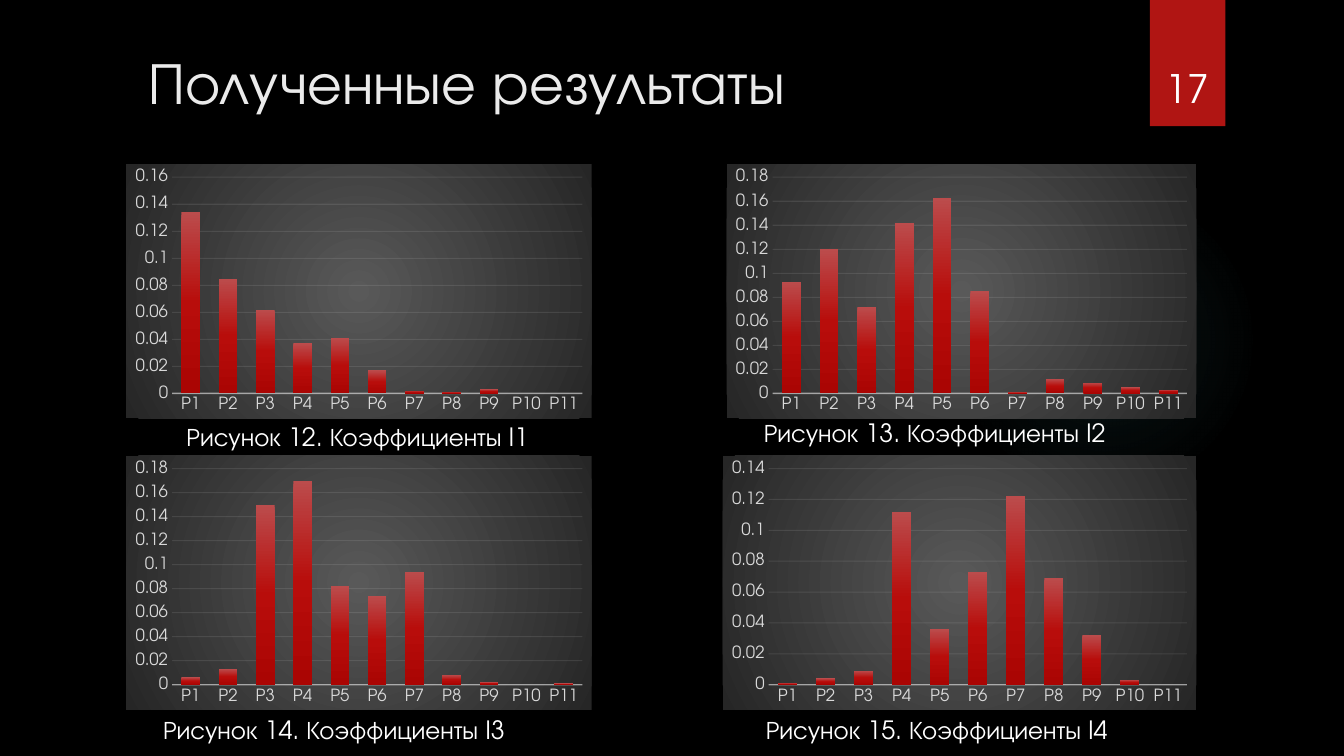
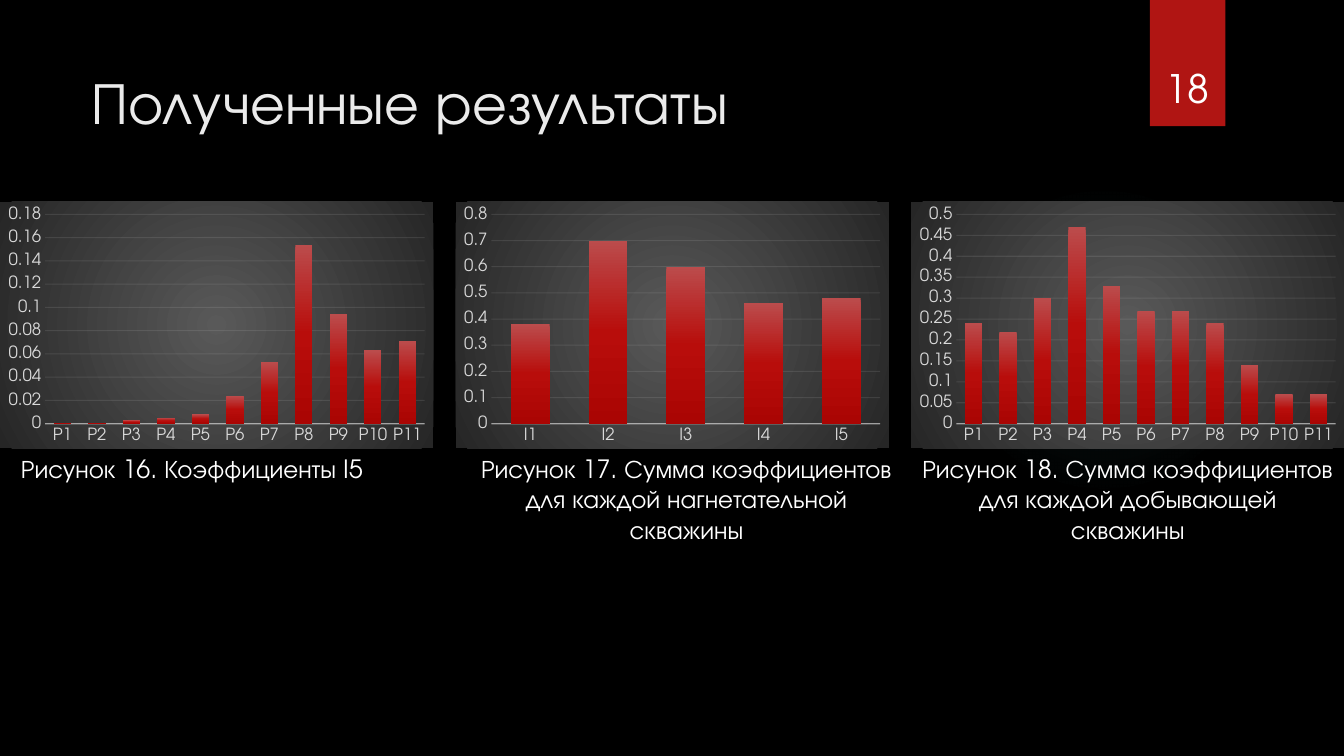
from lxml import etree
from pptx import Presentation
from pptx.chart.data import CategoryChartData
from pptx.dml.color import RGBColor
from pptx.enum.chart import XL_CHART_TYPE as ChartType, XL_TICK_MARK as TickMark
from pptx.enum.shapes import MSO_SHAPE as Preset
from pptx.enum.text import MSO_ANCHOR as Anchor, MSO_AUTO_SIZE as AutoSize, PP_ALIGN as Align
from pptx.oxml import parse_xml
from pptx.oxml.ns import nsdecls, qn
from pptx.util import Cm, Pt


class Theme:
    font = "TeX Gyre Adventor"
    background = "000000"
    band = "B01513"
    title = "EBEBEB"
    text = "FFFFFF"
    axis_text = "D9D9D9"
    axis_line = "F2F2F2"
    # Gradient stops: position %, colour, opacity %
    glow = [(0, "50B9C1", 7), (36, "50B9C1", 6), (69, "50B9C1", 0)]
    panel = [(0, "595959", 100), (100, "262626", 100)]
    bars = [(0, "BB4C4C", 100), (50, "B80D0B", 100), (100, "AA0503", 100)]
    title_size, number_size, caption_size, axis_size, chart_size = 42, 28, 18, 12, 10


def gradient(stops, radial=True):
    """Return a gradient fill, radial from the centre or running downwards."""
    stop_xml = "".join(
        f'<a:gs pos="{place * 1000}"><a:srgbClr val="{colour}">'
        f'<a:alpha val="{opacity * 1000}"/></a:srgbClr></a:gs>'
        for place, colour, opacity in stops)
    direction = ('<a:path path="circle"><a:fillToRect l="50000" t="50000" r="50000" b="50000"/></a:path>'
                 if radial else '<a:lin ang="5400000" scaled="0"/>')
    return parse_xml(f'<a:gradFill {nsdecls("a")} rotWithShape="1">'
                     f'<a:gsLst>{stop_xml}</a:gsLst>{direction}</a:gradFill>')


def add_text(page, text, left, top, width, height, *, size, colour=Theme.text,
             align=Align.LEFT, anchor=Anchor.TOP, grow=False):
    box = page.shapes.add_textbox(Cm(left), Cm(top), Cm(width), Cm(height))
    frame = box.text_frame
    frame.word_wrap = True
    frame.vertical_anchor = anchor
    frame.auto_size = AutoSize.SHAPE_TO_FIT_TEXT if grow else AutoSize.NONE
    para = frame.paragraphs[0]
    para.alignment = align
    span = para.add_run()
    span.text = text
    span.font.name = Theme.font
    span.font.size = Pt(size)
    span.font.color.rgb = RGBColor.from_string(colour)


# Content: each chart has place, categories, values, axis maximum and step;
# each caption has text, place and alignment
producers = [f"P{n}" for n in range(1, 12)]
injectors = [f"I{n}" for n in range(1, 6)]
upper, lower, panel_height = 4.14, 11.48, 6.4
row_top, row_width, row_height, row_pitch = 5.08, 10.92, 6.22, 11.48
row_caption = row_top + row_height

pages = [
    dict(
        number=17, title_at=(3.5, 1.02),
        charts=[
            ((3.18, upper, 11.73, panel_height), producers,
             [0.134, 0.085, 0.062, 0.037, 0.041, 0.017, 0.002, 0.001, 0.003, 0, 0], 0.16, 0.02),
            ((18.31, upper, 11.84, panel_height), producers,
             [0.093, 0.12, 0.072, 0.142, 0.163, 0.085, 0.001, 0.012, 0.009, 0.005, 0.003], 0.18, 0.02),
            ((3.18, lower, 11.73, panel_height), producers,
             [0.006, 0.013, 0.15, 0.17, 0.082, 0.074, 0.094, 0.008, 0.002, 0, 0.001], 0.18, 0.02),
            ((18.21, lower, 11.94, panel_height), producers,
             [0.001, 0.004, 0.009, 0.112, 0.036, 0.073, 0.122, 0.069, 0.032, 0.003, 0], 0.14, 0.02),
        ],
        captions=[
            ("Рисунок 12. Коэффициенты I1", (4.45, 10.49, 10.34, 1.02), Align.LEFT),
            ("Рисунок 13. Коэффициенты I2", (19, 10.39, 10.34, 1.02), Align.LEFT),
            ("Рисунок 14. Коэффициенты I3", (3.86, 17.88, 10.34, 1.02), Align.LEFT),
            ("Рисунок 15. Коэффициенты I4", (19.05, 17.88, 10.34, 1.02), Align.LEFT),
        ]),
    dict(
        number=18, title_at=(2.06, 1.52),
        charts=[
            ((0, row_top, row_width, row_height), producers,
             [0.001, 0.001, 0.003, 0.005, 0.008, 0.024, 0.053, 0.154, 0.094, 0.063, 0.071], 0.18, 0.02),
            ((row_pitch, row_top, row_width, row_height), injectors,
             [0.38, 0.7, 0.6, 0.46, 0.48], 0.8, 0.1),
            ((2 * row_pitch, row_top, row_width, row_height), producers,
             [0.24, 0.22, 0.3, 0.47, 0.33, 0.27, 0.27, 0.24, 0.14, 0.07, 0.07], 0.5, 0.05),
        ],
        captions=[
            ("Рисунок 16. Коэффициенты I5", (0.28, row_caption, 10.34, 1.02), Align.LEFT),
            ("Рисунок 17. Сумма коэффициентов для каждой нагнетательной скважины",
             (11.84, row_caption, row_width, 2.57), Align.CENTER),
            ("Рисунок 18. Сумма коэффициентов для каждой добывающей скважины",
             (2 * row_pitch, row_caption, row_width, 2.57), Align.CENTER),
        ]),
]

deck = Presentation()
deck.slide_width, deck.slide_height = Cm(33.87), Cm(19.05)
backdrop = deck.slide_master.background.fill
backdrop.solid()
backdrop.fore_color.rgb = RGBColor.from_string(Theme.background)

for content in pages:
    page = deck.slides.add_slide(deck.slide_layouts[6])

    # Glow and number band
    glow = page.shapes.add_shape(Preset.OVAL, Cm(23.9), Cm(4.65), Cm(7.82), Cm(7.82))
    band = page.shapes.add_shape(Preset.RECTANGLE, Cm(28.98), Cm(0), Cm(1.9), Cm(3.18))
    for shape in (glow, band):
        shape.shadow.inherit = False
        shape.line.fill.background()
        shape.fill.solid()
        shape.fill.fore_color.rgb = RGBColor.from_string(Theme.band)
    solid = glow.element.spPr.find(qn("a:solidFill"))
    solid.getparent().replace(solid, gradient(Theme.glow))

    # Title
    add_text(page, "Полученные результаты", *content["title_at"], 25.98, 1.65,
             size=Theme.title_size, colour=Theme.title)

    # Charts
    for place, categories, values, maximum, step in content["charts"]:
        data = CategoryChartData()
        data.categories = categories
        data.add_series("Series 1", values)
        chart = page.shapes.add_chart(
            ChartType.COLUMN_CLUSTERED, *[Cm(length) for length in place], data).chart
        chart.has_legend = False
        chart.has_title = False
        chart.font.name = Theme.font
        chart.font.size = Pt(Theme.chart_size)
        chart.font.color.rgb = RGBColor.from_string(Theme.text)

        # Panel behind the plot
        panel = parse_xml(f'<c:spPr {nsdecls("c", "a")}><a:ln><a:noFill/></a:ln></c:spPr>')
        panel.insert(0, gradient(Theme.panel))
        chart._chartSpace.find(qn("c:chart")).addnext(panel)

        # Columns
        plot = chart.plots[0]
        plot.vary_by_categories = False
        plot.gap_width, plot.overlap = 100, -24
        series = plot.series[0]
        series.format.fill.solid()
        solid = series._element.find(qn("c:spPr")).find(qn("a:solidFill"))
        solid.getparent().replace(solid, gradient(Theme.bars, radial=False))

        # Axes and grid
        category_axis, value_axis = chart.category_axis, chart.value_axis
        for axis in (category_axis, value_axis):
            axis.major_tick_mark = axis.minor_tick_mark = TickMark.NONE
            font = axis.tick_labels.font
            font.name = Theme.font
            font.size = Pt(Theme.axis_size)
            font.color.rgb = RGBColor.from_string(Theme.axis_text)
        value_axis.minimum_scale, value_axis.maximum_scale = 0, maximum
        value_axis.major_unit = step
        value_axis.format.line.fill.background()
        value_axis.has_major_gridlines = True
        for line, width, opacity in ((category_axis.format.line, 1, 54),
                                     (value_axis.major_gridlines.format.line, 0.75, 10)):
            line.width = Pt(width)
            line.color.rgb = RGBColor.from_string(Theme.axis_line)
            colour = line._get_or_add_ln().find(".//" + qn("a:srgbClr"))
            etree.SubElement(colour, qn("a:alpha"), val=str(opacity * 1000))

    # Captions and slide number
    for caption, place, align in content["captions"]:
        add_text(page, caption, *place, size=Theme.caption_size, align=align, grow=True)
    add_text(page, str(content["number"]), 28.75, 0.81, 2.34, 2.13,
             size=Theme.number_size, align=Align.CENTER, anchor=Anchor.BOTTOM)

deck.save("out.pptx")
